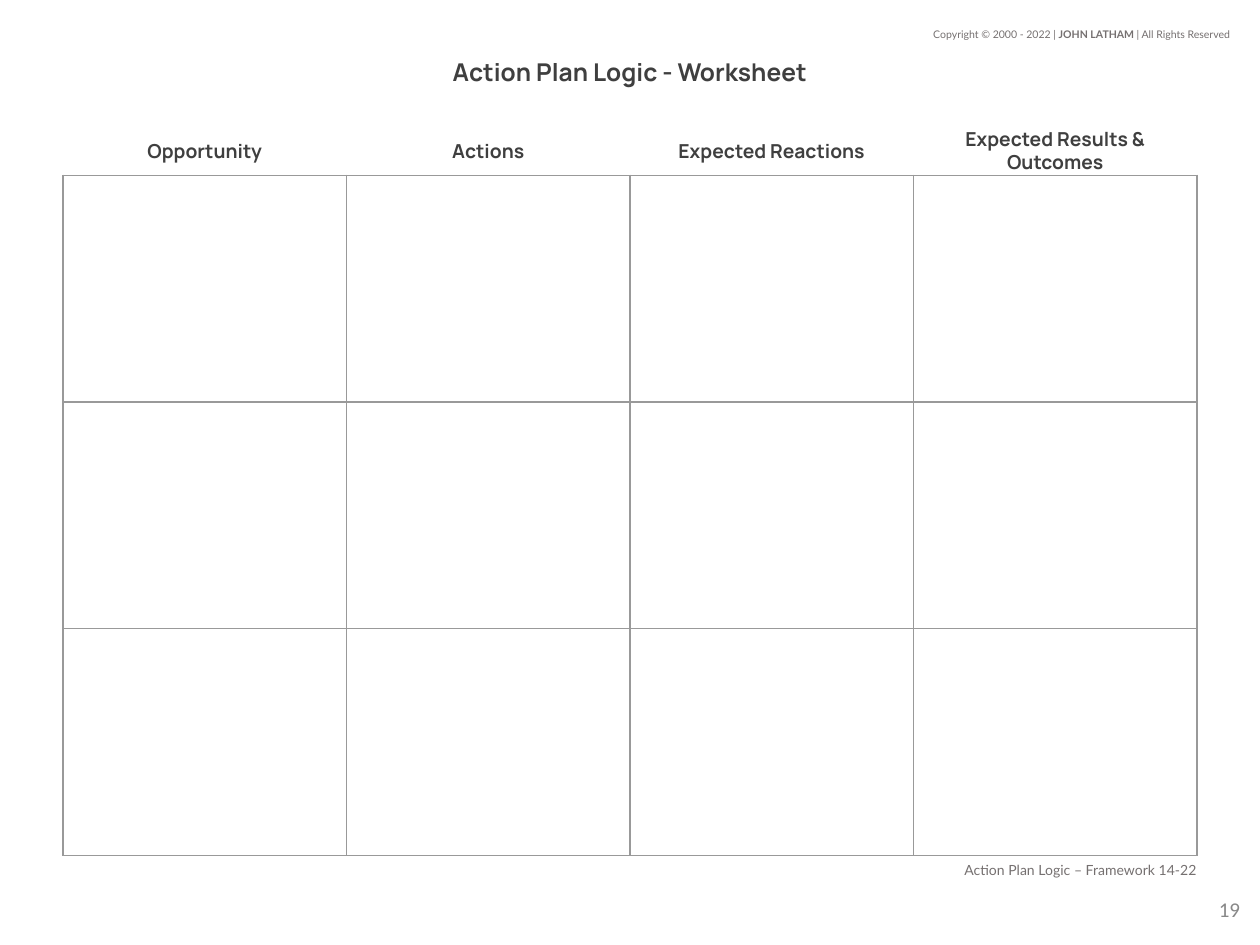
import pptx
import pptx.util
import pptx.dml.color
import pptx.enum.text
import pptx.oxml
import pptx.oxml.ns

PX = 9144  # EMU per px, 100 px to the inch
COLORS = {"ink": "3F3F3F", "soft": "757070", "page": "888888",
          "rule": "999999", "back": "FFFFFF"}
ALIGN = pptx.enum.text.PP_ALIGN
MID = pptx.enum.text.MSO_ANCHOR.MIDDLE
TOP = pptx.enum.text.MSO_ANCHOR.TOP

HEADS = ["Opportunity", "Actions", "Expected Reactions",
         "Expected Results & Outcomes"]
ROWS = 3
LEFT, UPPER, WIDE, HIGH = 50, 139, 900, 540
HEAD_H = 39
COL_W, ROW_H = WIDE // len(HEADS), HIGH // ROWS

# box, runs of (text, bold), size, font, colour, align, anchor, insets
LABELS = [
    ((728, 17, 258, 20),
     [("Copyright © 2000 - 2022 | ", False), ("JOHN LATHAM ", True),
      ("| All Rights Reserved", False)],
     6, "Lato", "soft", ALIGN.RIGHT, TOP, (10, 5, 10, 5)),
    ((934, 693, 60, 57), [("19", False)],
     12, "Calibri", "page", ALIGN.RIGHT, MID, (10, 10, 10, 10)),
    ((LEFT, 42, WIDE, 30), [("Action Plan Logic - Worksheet", True)],
     14, "Manrope", "ink", ALIGN.CENTER, MID, (10, 10, 10, 10)),
    ((LEFT, UPPER + HIGH, WIDE, 22),
     [("Action Plan Logic – Framework 14-22", False)],
     8, "Lato", "soft", ALIGN.RIGHT, MID, (10, 10, 0, 10)),
] + [
    ((LEFT + i * COL_W, UPPER - HEAD_H, COL_W, HEAD_H), [(head, True)],
     11, "Manrope", "ink", ALIGN.CENTER, MID, (10, 10, 10, 10))
    for i, head in enumerate(HEADS)
]


def emu(*lengths):
    return [n * PX for n in lengths]


def rgb(name):
    return pptx.dml.color.RGBColor.from_string(COLORS[name])


def label(slide, box, runs, size, face, color, align, anchor, insets):
    frame = slide.shapes.add_textbox(*emu(*box)).text_frame
    frame.word_wrap = True
    frame.vertical_anchor = anchor
    (frame.margin_left, frame.margin_top,
     frame.margin_right, frame.margin_bottom) = emu(*insets)
    para = frame.paragraphs[0]
    para.alignment = align
    for text, bold in runs:
        run = para.add_run()
        run.text = text
        run.font.size = pptx.util.Pt(size)
        run.font.name = face
        run.font.bold = bold
        run.font.color.rgb = rgb(color)


def border(cell):
    """Draw all four cell edges, ahead of the fill in the cell's XML."""
    props = cell._tc.get_or_add_tcPr()
    for i, side in enumerate(("lnL", "lnR", "lnT", "lnB")):
        props.insert(i, pptx.oxml.parse_xml(
            f'<a:{side} {pptx.oxml.ns.nsdecls("a")} w="{pptx.util.Pt(0.75)}">'
            f'<a:solidFill><a:srgbClr val="{COLORS["rule"]}"/></a:solidFill>'
            f'</a:{side}>'))


def grid(slide):
    table = slide.shapes.add_table(
        ROWS, len(HEADS), *emu(LEFT, UPPER, WIDE, HIGH)).table
    table.first_row = table.horz_banding = False
    for col in table.columns:
        col.width = COL_W * PX
    for row in table.rows:
        row.height = ROW_H * PX
    for cell in table.iter_cells():
        cell.fill.background()
        border(cell)


def main():
    deck = pptx.Presentation()
    deck.slide_width, deck.slide_height = emu(1000, 750)
    slide = deck.slides.add_slide(deck.slide_layouts[6])
    slide.background.fill.solid()
    slide.background.fill.fore_color.rgb = rgb("back")
    grid(slide)
    for item in LABELS:
        label(slide, *item)
    deck.save("out.pptx")


if __name__ == "__main__":
    main()
